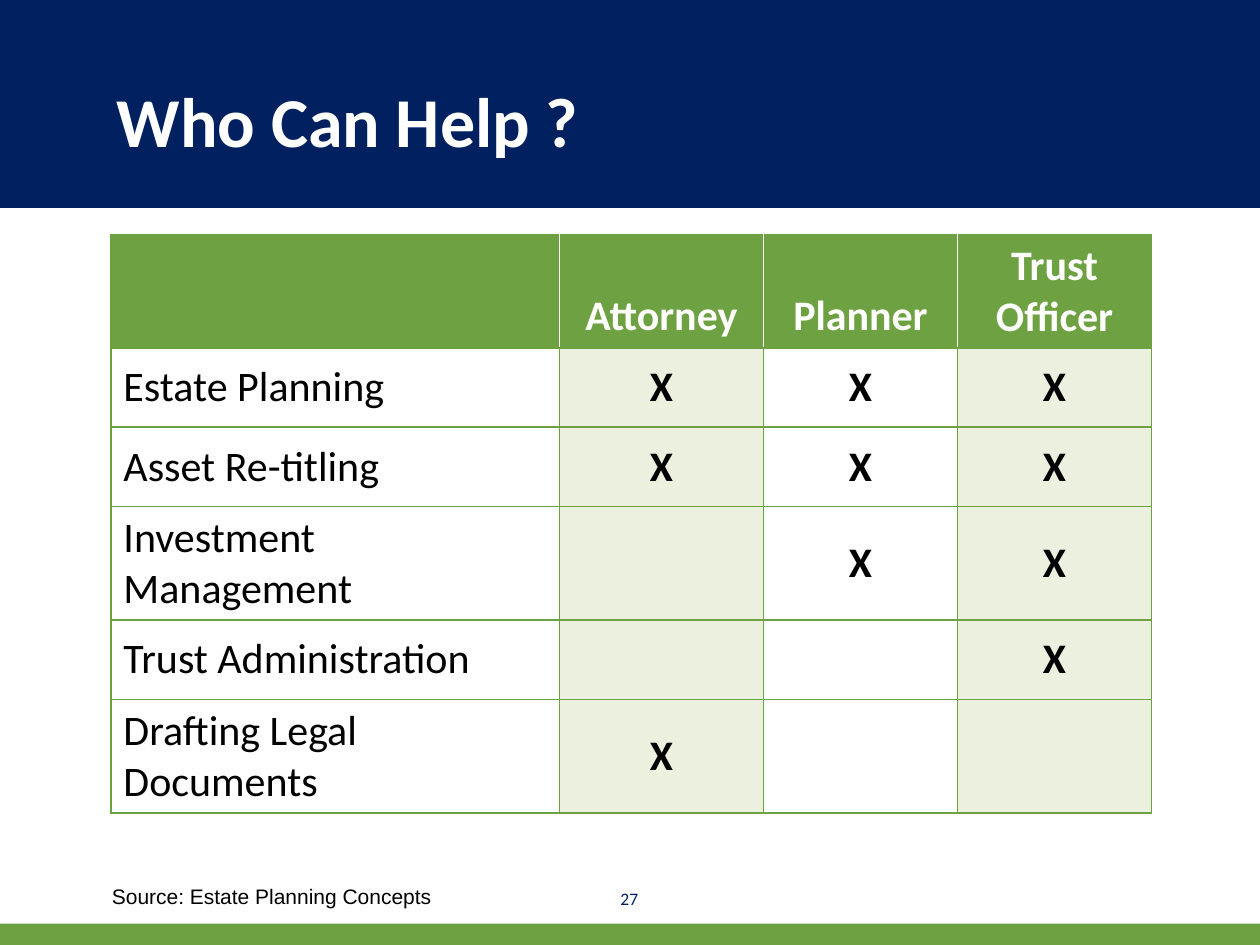
from lxml.etree import SubElement
from pptx import Presentation
from pptx.dml.color import RGBColor
from pptx.enum.shapes import MSO_SHAPE
from pptx.enum.text import MSO_ANCHOR, PP_ALIGN
from pptx.oxml.ns import qn
from pptx.util import Inches, Pt

COLORS = {"navy": "002060", "green": "6DA141", "pale": "EBF1DE",
          "white": "FFFFFF", "black": "000000"}
COLS, ROWS = 10, 7.5  # slide grid

HEADERS = ["", "Attorney", "Planner", "Trust Officer"]
SERVICES = [
    ("Estate Planning", "X", "X", "X"),
    ("Asset Re-titling", "X", "X", "X"),
    ("Investment Management", "", "X", "X"),
    ("Trust Administration", "", "", "X"),
    ("Drafting Legal Documents", "X", "", ""),
]


def rgb(name):
    return RGBColor.from_string(COLORS[name])


class Deck:
    """Holds the style, the grid and the current slide."""

    def __init__(self, font="Calibri"):
        self.font = font
        self.prs = Presentation()
        self.prs.slide_width, self.prs.slide_height = Inches(10), Inches(7.5)
        self.s = self.prs.slides.add_slide(self.prs.slide_layouts[6])

    def x(self, cols):
        return int(self.prs.slide_width * cols / COLS)

    def y(self, rows):
        return int(self.prs.slide_height * rows / ROWS)

    def area(self, left, top, width, height):
        return self.x(left), self.y(top), self.x(width), self.y(height)

    def style(self, p, size, color, bold=False, align=PP_ALIGN.LEFT, font=None):
        p.alignment = align
        p.font.name, p.font.size, p.font.bold = font or self.font, Pt(size), bold
        p.font.color.rgb = rgb(color)

    def band(self, *area, color):
        sp = self.s.shapes.add_shape(MSO_SHAPE.RECTANGLE, *self.area(*area))
        sp.shadow.inherit = False
        sp.fill.solid()
        sp.fill.fore_color.rgb = rgb(color)
        sp.line.fill.background()

    def text(self, words, *area, anchor=MSO_ANCHOR.TOP, **style):
        tf = self.s.shapes.add_textbox(*self.area(*area)).text_frame
        tf.word_wrap, tf.vertical_anchor = True, anchor
        tf.text = words
        self.style(tf.paragraphs[0], **style)

    def borders(self, cell, colors):
        tcPr = cell._tc.get_or_add_tcPr()
        for i, (side, color) in enumerate(zip("LRTB", colors)):
            ln = SubElement(tcPr, qn(f"a:ln{side}"), w=str(Pt(1)))
            fill = SubElement(ln, qn("a:solidFill"))
            SubElement(fill, qn("a:srgbClr"), val=COLORS[color])
            tcPr.insert(i, ln)  # borders come before the fill

    def table(self, rows, left, top, widths, heights):
        area = self.area(left, top, sum(widths), sum(heights))
        table = self.s.shapes.add_table(len(rows), len(widths), *area).table
        table.first_row = table.horz_banding = False
        for column, width in zip(table.columns, widths):
            column.width = self.x(width)
        for row, height in zip(table.rows, heights):
            row.height = self.y(height)
        for r, row in enumerate(rows):
            for c, words in enumerate(row):
                self.cell(table.cell(r, c), words, r == 0, c, len(row) - 1)

    def cell(self, cell, words, header, c, last):
        cell.vertical_anchor = MSO_ANCHOR.BOTTOM if header else MSO_ANCHOR.MIDDLE
        cell.text = words
        self.style(cell.text_frame.paragraphs[0], 24,
                   "white" if header else "black", bold=header or c > 0,
                   align=PP_ALIGN.CENTER if c else PP_ALIGN.LEFT)
        # Header is green, every second column below it is pale
        if header or c % 2:
            cell.fill.solid()
            cell.fill.fore_color.rgb = rgb("green" if header else "pale")
        else:
            cell.fill.background()
        self.borders(cell, ["white" if header and c > 0 else "green",
                            "white" if header and c < last else "green",
                            "green", "green"])


def main():
    deck = Deck()

    # Top and bottom bands
    deck.band(0, 0, COLS, 1.65, color="navy")
    deck.band(0, 7.33, COLS, 0.17, color="green")

    # Title
    deck.text("Who Can Help ?", 0.83, 0.32, 8.67, 1.01,
              anchor=MSO_ANCHOR.BOTTOM, size=40, color="white", bold=True)

    # Page number and source
    deck.text("27", 4.81, 6.93, 0.37, 0.4, anchor=MSO_ANCHOR.MIDDLE,
              size=10, color="navy", align=PP_ALIGN.CENTER)
    deck.text("Source: Estate Planning Concepts", 0.79, 6.96, 2.83, 0.3,
              size=12, color="black", font="Arial")

    # Who helps with which service
    deck.table([HEADERS, *SERVICES], 0.88, 1.86,
               widths=[3.56, 1.62, 1.54, 1.54],
               heights=[0.71] + [0.63] * len(SERVICES))

    deck.prs.save("out.pptx")


if __name__ == "__main__":
    main()
